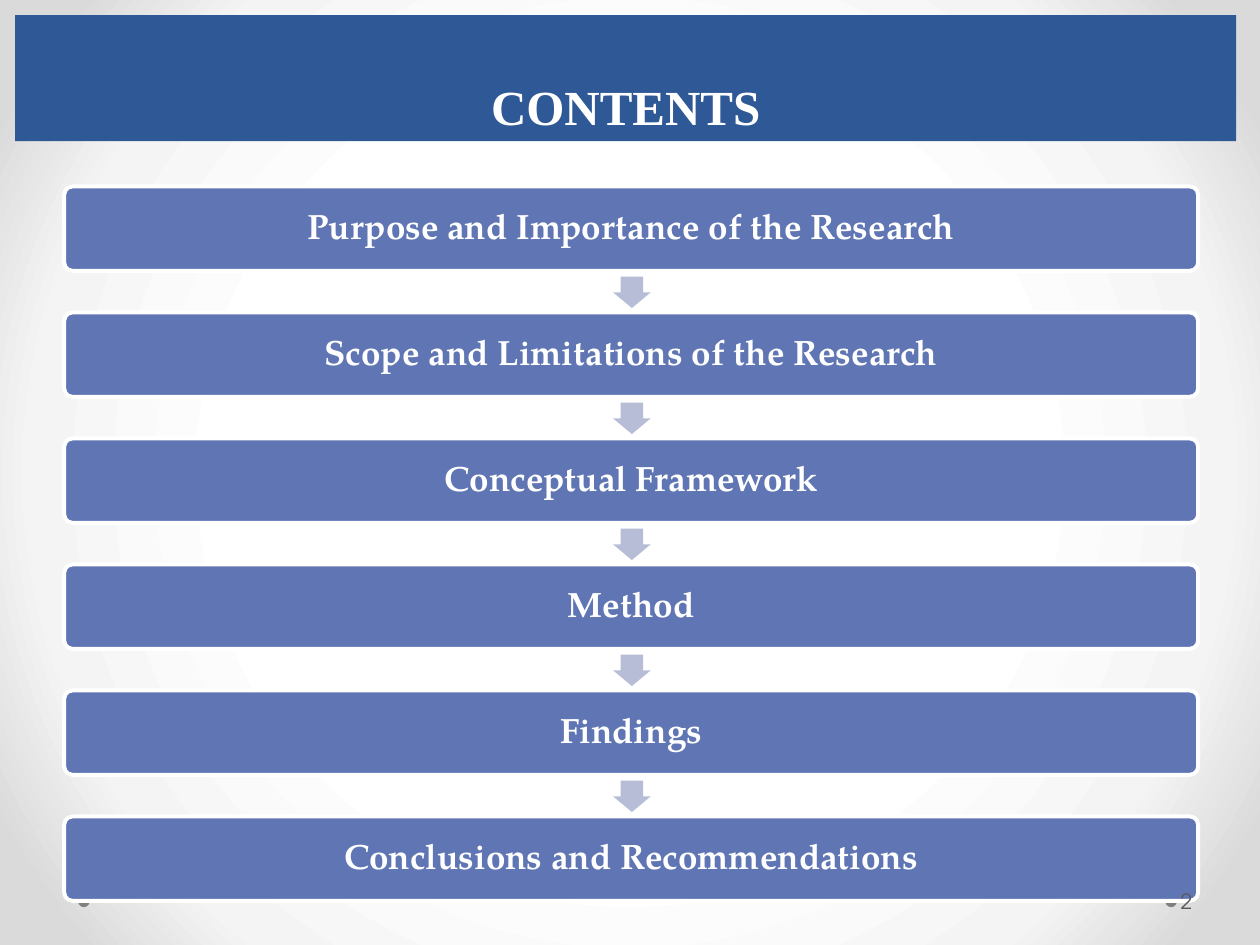
from dataclasses import dataclass

from pptx import Presentation
from pptx.dml.color import RGBColor
from pptx.enum.shapes import MSO_SHAPE
from pptx.enum.text import MSO_ANCHOR, PP_ALIGN
from pptx.oxml import parse_xml
from pptx.oxml.ns import nsdecls
from pptx.util import Inches, Pt


@dataclass(frozen=True)
class Theme:
    white: str = "FFFFFF"
    navy: str = "2F5897"
    blue: str = "6076B4"
    pale: str = "B7BDD6"
    gray: str = "808080"
    ink: str = "595959"
    head: str = "Times New Roman"
    body: str = "TeX Gyre Pagella"
    foot: str = "TeX Gyre Adventor"
    large: int = 28
    base: int = 20
    small: int = 12
    glow: tuple = ((50, "FFFFFF"), (76, "F4F4F4"), (92, "DADADA"))


@dataclass(frozen=True)
class Box:
    col: float
    row: float
    cols: float
    rows: float

    def place(self) -> tuple:
        return tuple(Inches(n) for n in (self.col, self.row, self.cols, self.rows))


LOOK = Theme()
COLS, ROWS = 10, 7.5
TITLE = Box(0.12, 0.12, 9.69, 1)
PAGE = Box(9.34, 6.95, 0.61, 0.4)
DOTS = (Box(9.25, 7.11, 0.09, 0.09), Box(0.62, 7.11, 0.09, 0.09))
TOP, STEP, DROP = 1.48, 1, 0.69
STAGES = (
    "Purpose and Importance of the Research",
    "Scope and Limitations of the Research",
    "Conceptual Framework",
    "Method",
    "Findings",
    "Conclusions and Recommendations",
)


def write(shape, text: str, *, font: str, size: int, color: str, bold=False,
          align=PP_ALIGN.CENTER, anchor=MSO_ANCHOR.MIDDLE, lead=None,
          inset=(0.08, 0.08, 0.08, 0.08)) -> None:
    frame = shape.text_frame
    frame.word_wrap = True
    frame.vertical_anchor = anchor
    sides = ("left", "top", "right", "bottom")
    for side, gap in zip(sides, inset):
        setattr(frame, f"margin_{side}", Inches(gap))
    para = frame.paragraphs[0]
    para.alignment = align
    para.line_spacing = lead
    run = para.add_run()
    run.text = text
    run.font.name, run.font.size, run.font.bold = font, Pt(size), bold
    run.font.color.rgb = RGBColor.from_string(color)


def draw(slide, kind, box: Box, fill: str, *, line=None, bends=(), turn=0):
    shape = slide.shapes.add_shape(kind, *box.place())
    shape.shadow.inherit = False
    shape.fill.solid()
    shape.fill.fore_color.rgb = RGBColor.from_string(fill)
    if line:
        shape.line.color.rgb = RGBColor.from_string(line)
        shape.line.width = Pt(2.25)
    else:
        shape.line.fill.background()
    for i, bend in enumerate(bends):
        shape.adjustments[i] = bend
    shape.rotation = turn
    return shape


def shade(slide) -> None:
    slide.background.fill.solid()
    stops = "".join(
        f'<a:gs pos="{pos * 1000}"><a:srgbClr val="{color}"/></a:gs>'
        for pos, color in LOOK.glow
    )
    mid = " ".join(f'{side}="50000"' for side in "ltrb")
    grad = parse_xml(
        f'<a:gradFill {nsdecls("a")} rotWithShape="1"><a:gsLst>{stops}</a:gsLst>'
        f'<a:path path="circle"><a:fillToRect {mid}/></a:path></a:gradFill>'
    )
    solid = slide.element.xpath(".//p:bgPr/a:solidFill")[0]
    solid.getparent().replace(solid, grad)


def flow(slide) -> None:
    for i, stage in enumerate(STAGES):
        row = TOP + i * STEP
        bar = draw(slide, MSO_SHAPE.ROUNDED_RECTANGLE, Box(0.51, row, 9, 0.67),
                   LOOK.blue, line=LOOK.white, bends=(0.1,))
        write(bar, stage, font=LOOK.body, size=LOOK.base, color=LOOK.white,
              bold=True, lead=0.9)
        if i < len(STAGES) - 1:
            draw(slide, MSO_SHAPE.RIGHT_ARROW, Box(4.89, row + DROP, 0.25, 0.3),
                 LOOK.pale, bends=(0.6, 0.5), turn=90)


def main() -> None:
    deck = Presentation()
    deck.slide_width, deck.slide_height = Inches(COLS), Inches(ROWS)
    slide = deck.slides.add_slide(deck.slide_layouts[6])
    shade(slide)
    for dot in DOTS:
        draw(slide, MSO_SHAPE.OVAL, dot, LOOK.gray)
    flow(slide)
    title = draw(slide, MSO_SHAPE.RECTANGLE, TITLE, LOOK.navy)
    write(title, "CONTENTS", font=LOOK.head, size=LOOK.large, color=LOOK.white,
          bold=True, anchor=MSO_ANCHOR.BOTTOM, lead=Pt(58),
          inset=(0.1, 0.05, 0.1, 0.05))
    page = slide.shapes.add_textbox(*PAGE.place())
    write(page, "2", font=LOOK.foot, size=LOOK.small, color=LOOK.ink,
          align=PP_ALIGN.LEFT, inset=(0.03, 0.05, 0.05, 0.05))
    deck.save("out.pptx")


if __name__ == "__main__":
    main()
